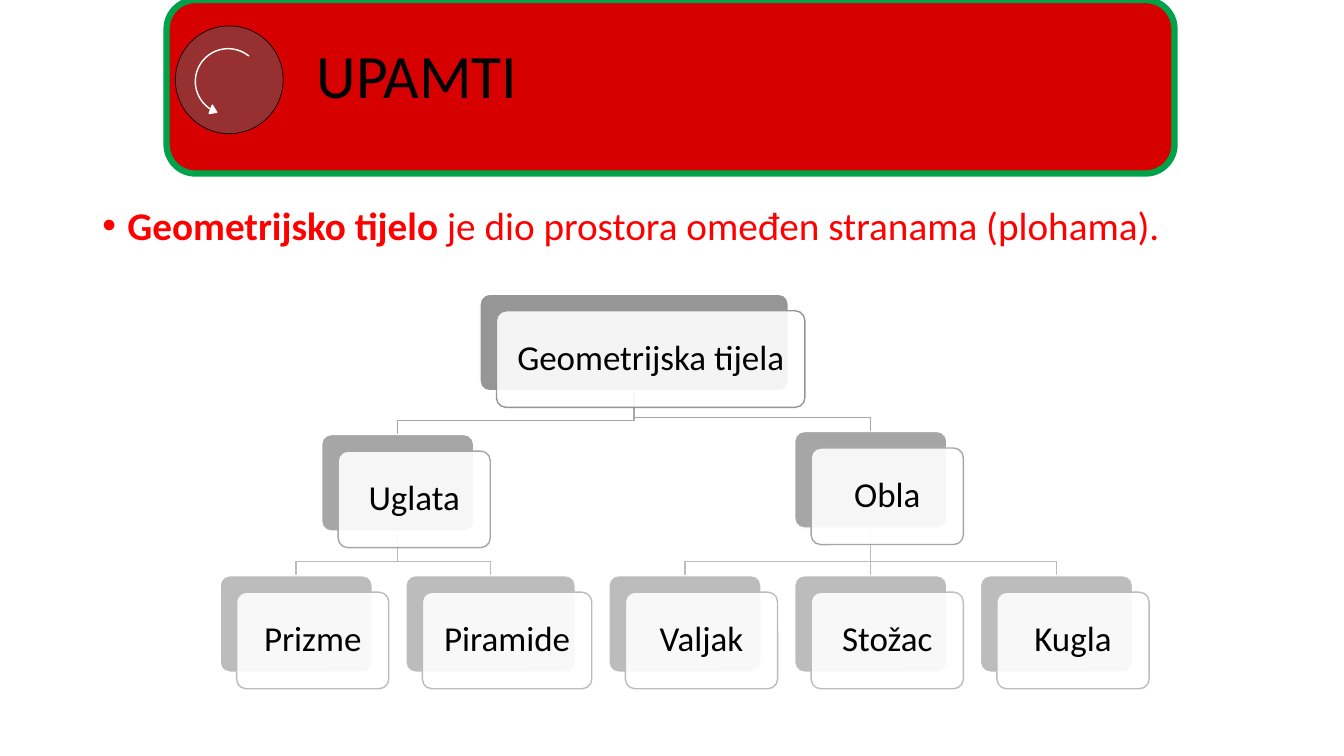
from lxml import etree
from pptx import Presentation
from pptx.dml.color import RGBColor
from pptx.enum.shapes import MSO_SHAPE
from pptx.enum.text import MSO_ANCHOR, PP_ALIGN
from pptx.oxml.ns import qn
from pptx.util import Pt

ROUNDED = MSO_SHAPE.ROUNDED_RECTANGLE
OVAL = MSO_SHAPE.OVAL
CIRCULAR_ARROW = MSO_SHAPE.CIRCULAR_ARROW
MIDDLE = MSO_ANCHOR.MIDDLE
LEFT, CENTER = PP_ALIGN.LEFT, PP_ALIGN.CENTER

FONT = "Calibri"
COLORS = {
    "white": "FFFFFF", "black": "000000", "banner": "D60000",
    "border": "00A249", "definition": "FF0000", "badge": "5F5F5F",
}
LEVEL_GRAYS = ["969696", "A6A6A6", "BCBCBC"]
CARD_HEIGHT = 69
CARD_OFFSET = 11.8
ELBOW_RISE = 10
LEAF_TOP = 201
LEAF_GAP = 24
CARD_WIDTH = 108.7
BRANCHES = [
    ("Uglata", 100.2, [("Prizme", CARD_WIDTH), ("Piramide", 121)]),
    ("Obla", 98, [("Valjak", CARD_WIDTH), ("Stožac", CARD_WIDTH), ("Kugla", CARD_WIDTH)]),
]


def rgb(hex_value):
    """Turn a hex string into a colour."""
    return RGBColor.from_string(hex_value)


def add_block(shapes, kind, box, fill, line, weight, opacity=100):
    """Add a flat preset shape with a fill, an outline and an opacity in percent."""
    block = shapes.add_shape(kind, *(Pt(length) for length in box))
    block.shadow.inherit = False
    block.fill.solid()
    block.fill.fore_color.rgb = rgb(fill)
    block.line.color.rgb = rgb(line)
    block.line.width = Pt(weight)
    if opacity < 100:
        color = block._element.spPr.find(qn("a:solidFill"))[0]
        etree.SubElement(color, qn("a:alpha"), val=str(opacity * 1000))
    return block


def style_paragraph(paragraph, size, color, align):
    """Set the font, colour, alignment and line spacing of a paragraph."""
    paragraph.font.name = FONT
    paragraph.font.size = Pt(size)
    paragraph.font.color.rgb = rgb(color)
    paragraph.alignment = align
    paragraph.line_spacing = 0.9


def add_banner(slide, left, top, width, height):
    """Place the red banner behind the slide title."""
    banner = add_block(slide.shapes, ROUNDED, (left, top, width, height),
                       COLORS["banner"], COLORS["border"], 4.5)
    slide.shapes._spTree.insert(2, banner._element)
    title = slide.shapes.title
    title.left, title.top = Pt(left + 100), Pt(top)
    title.width, title.height = Pt(width - 100), Pt(height - 12)
    title.text_frame.text = "UPAMTI"
    title.text_frame.vertical_anchor = MIDDLE
    style_paragraph(title.text_frame.paragraphs[0], 44, COLORS["black"], LEFT)


def add_badge(slide, left, top, size):
    """Draw the round badge with its circular arrow."""
    group = slide.shapes.add_group_shape().shapes
    add_block(group, OVAL, (left, top, size, size),
              COLORS["badge"], COLORS["black"], 0.5, 52)
    arrow = add_block(group, CIRCULAR_ARROW, (left + 11, top + 13, 53.3, 53.3),
                      COLORS["white"], COLORS["white"], 1)
    arrow.rotation = 144.4
    arrow._element.spPr.find(qn("a:xfrm")).set("flipH", "1")
    units_per_degree = 0.6
    arrow.adjustments[0] = 0
    for index, degrees in enumerate((11.42, 202.45, 15.82), start=1):
        arrow.adjustments[index] = degrees * units_per_degree
    arrow.adjustments[4] = 0.06


def add_definition(slide, left, top, width, height):
    """Write the bulleted definition."""
    frame = slide.shapes.add_textbox(Pt(left), Pt(top), Pt(width), Pt(height)).text_frame
    frame.word_wrap = True
    definition = frame.paragraphs[0]
    style_paragraph(definition, 28, COLORS["definition"], LEFT)
    definition.space_before = Pt(10)
    term = definition.add_run()
    term.text = "Geometrijsko tijelo "
    term.font.bold = True
    definition.add_run().text = "je dio prostora omeđen stranama (plohama)."
    properties = definition._p.get_or_add_pPr()
    properties.set("marL", str(Pt(18)))
    properties.set("indent", str(-Pt(18)))
    bullet_font = etree.Element(qn("a:buFont"), typeface="Arial")
    bullet = etree.Element(qn("a:buChar"), char="•")
    properties.find(qn("a:spcBef")).addnext(bullet_font)
    bullet_font.addnext(bullet)


def add_card(shapes, label, left, top, width, gray):
    """Draw a node as a gray card with a labelled white card in front."""
    cards = [
        add_block(shapes, ROUNDED, (left, top, width, CARD_HEIGHT), gray, COLORS["white"], 1),
        add_block(shapes, ROUNDED, (left + CARD_OFFSET, top + CARD_OFFSET, width, CARD_HEIGHT),
                  COLORS["white"], gray, 1, 90),
    ]
    for card in cards:
        card.adjustments[0] = 0.1
    frame = cards[-1].text_frame
    frame.margin_left = frame.margin_right = Pt(9)
    frame.word_wrap = True
    frame.vertical_anchor = MIDDLE
    frame.text = label
    style_paragraph(frame.paragraphs[0], 25, COLORS["black"], CENTER)


def add_elbow(shapes, parent, child, gray):
    """Join the bottom of a parent card to the top of a child card."""
    (start_x, start_y), (end_x, end_y) = parent, child
    start_y += CARD_HEIGHT
    bend = end_y - ELBOW_RISE
    builder = shapes.build_freeform(Pt(start_x), Pt(start_y))
    corners = [(start_x, bend), (end_x, bend), (end_x, end_y)]
    builder.add_line_segments([(Pt(x), Pt(y)) for x, y in corners], close=False)
    elbow = builder.convert_to_shape()
    elbow.shadow.inherit = False
    elbow.fill.background()
    elbow.line.color.rgb = rgb(gray)
    elbow.line.width = Pt(1)


def add_tree(slide, left, top):
    """Lay out the leaves in a row, centre each parent above them and draw the tree."""
    cards, links, branch_points = [], [], []
    leaf_left = left
    for branch, branch_drop, leaves in BRANCHES:
        span_left = leaf_left
        leaf_points = []
        for leaf, width in leaves:
            cards.append((leaf, leaf_left, top + LEAF_TOP, width, 2))
            leaf_points.append((leaf_left + width / 2, top + LEAF_TOP))
            leaf_left += width + LEAF_GAP
        middle = (span_left + leaf_left - LEAF_GAP) / 2
        point = (middle, top + branch_drop)
        branch_points.append(point)
        cards.append((branch, middle - CARD_WIDTH / 2, point[1], CARD_WIDTH, 1))
        links += [(point, leaf_point, 2) for leaf_point in leaf_points]
    root_width = 220.3
    root_x = sum(x for x, _ in branch_points) / len(branch_points)
    cards.append(("Geometrijska tijela", root_x - root_width / 2, top, root_width, 0))
    links += [((root_x, top), point, 1) for point in branch_points]

    group = slide.shapes.add_group_shape().shapes
    for parent, child, level in links:
        add_elbow(group, parent, child, LEVEL_GRAYS[level])
    for label, card_left, card_top, width, level in cards:
        add_card(group, label, card_left, card_top, width, LEVEL_GRAYS[level])


def main():
    """Build the slide and save it."""
    deck = Presentation()
    deck.slide_width, deck.slide_height = Pt(960), Pt(540)
    slide = deck.slides.add_slide(deck.slide_layouts[5])
    add_banner(slide, 119, 0, 720, 124)
    add_definition(slide, 66, 144, 828, 50)
    add_tree(slide, 157.2, 210.2)
    add_badge(slide, 125.3, 18.5, 77)
    deck.save("out.pptx")


if __name__ == "__main__":
    main()
